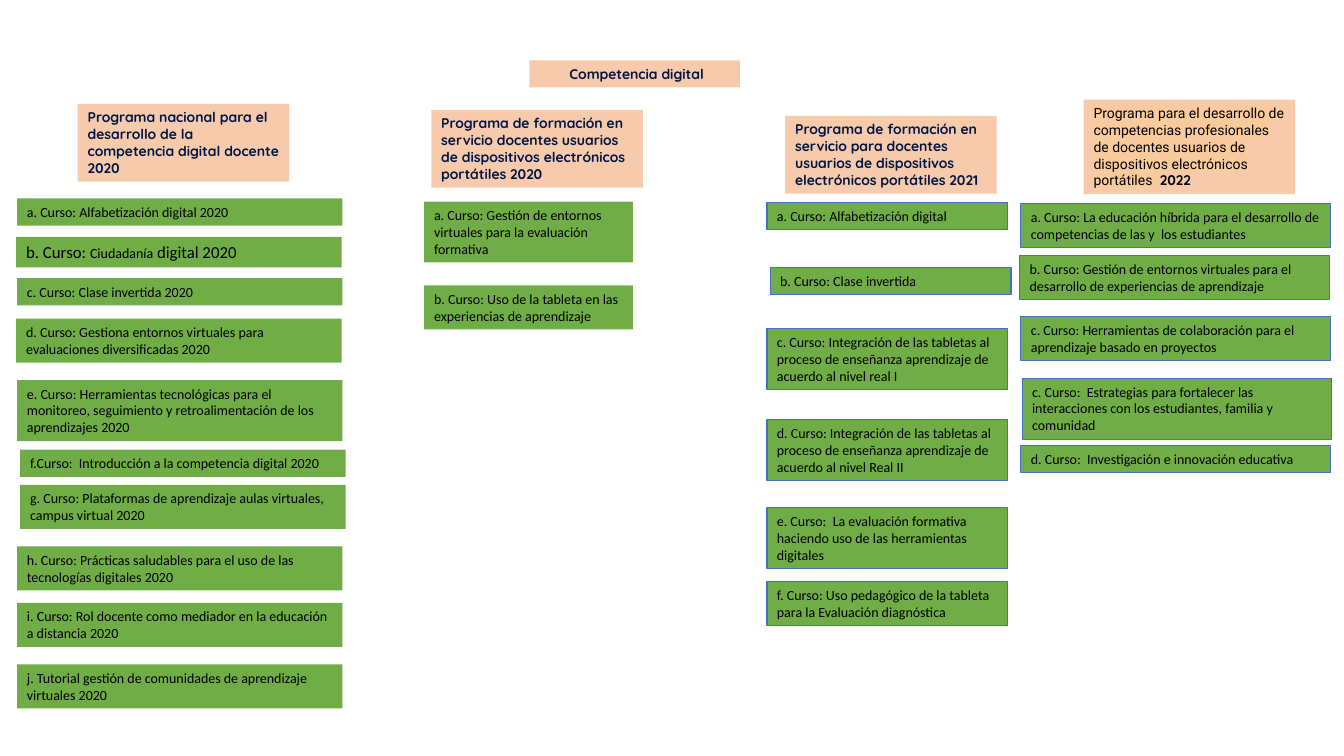
from dataclasses import dataclass

from lxml.etree import SubElement
from pptx import Presentation
from pptx.dml.color import RGBColor as RGB
from pptx.enum.shapes import MSO_SHAPE as SHAPE
from pptx.enum.text import MSO_ANCHOR as ANCHOR, MSO_AUTO_SIZE as AUTO, PP_ALIGN as ALIGN
from pptx.oxml.ns import qn
from pptx.util import Cm, Pt


@dataclass(frozen=True)
class Theme:
    peach: str = "F7CAAC"
    green: str = "70AD47"
    outline: str = "4472C4"
    navy: str = "011643"
    black: str = "000000"
    highlight: str = "F9CB9C"
    heading_font: str = "Quicksand"
    plain_font: str = "Roboto"
    course_font: str = "Calibri"
    size: int = 10
    large: int = 12
    outline_width: float = 0.75


theme = Theme()


def add_box(left, top, width, lines, fill, text, font, color, bold=False, outlined=False):
    """Add a filled box whose height follows its number of text lines."""
    sp = s.shapes.add_shape(SHAPE.RECTANGLE, Cm(left), Cm(top), Cm(width),
                            Cm(0.26 + 0.425 * lines))
    sp.shadow.inherit = False
    sp.fill.solid()
    sp.fill.fore_color.rgb = RGB.from_string(fill)
    if outlined:
        sp.line.color.rgb = RGB.from_string(theme.outline)
        sp.line.width = Pt(theme.outline_width)
    else:
        sp.line.fill.background()
    tf = sp.text_frame
    tf.word_wrap = True
    tf.auto_size = AUTO.SHAPE_TO_FIT_TEXT
    tf.vertical_anchor = ANCHOR.TOP
    p = tf.paragraphs[0]
    p.alignment = ALIGN.LEFT
    p.font.name = font
    p.font.size = Pt(theme.size)
    p.font.bold = bold
    p.font.color.rgb = RGB.from_string(color)
    for part in [text] if isinstance(text, str) else text:
        r = p.add_run()
        r.text = part
        # The shape style colours its text, so each run states its colour
        r.font.color.rgb = RGB.from_string(color)
    return p


prs = Presentation()
prs.slide_width, prs.slide_height = Cm(33.87), Cm(19.05)
s = prs.slides.add_slide(prs.slide_layouts[6])

# Title
p = add_box(13.34, 1.52, 5.31, 1, theme.peach, " Competencia digital",
            theme.heading_font, theme.navy, bold=True)
p.alignment = ALIGN.CENTER

# Programme headings: left, top, text
programmes = [
    (1.96, 2.62, "Programa nacional para el desarrollo de la competencia digital docente 2020"),
    (10.87, 2.77, "Programa de formación en servicio docentes usuarios de dispositivos "
                  "electrónicos portátiles 2020"),
    (19.79, 2.92, "Programa de formación en servicio para docentes usuarios de dispositivos "
                  "electrónicos portátiles 2021"),
]
for left, top, text in programmes:
    add_box(left, top, 5.33, 4, theme.peach, text, theme.heading_font, theme.navy, bold=True)

# 2022 programme heading, highlighted up to the bold year
p = add_box(27.31, 2.51, 5.33, 5, theme.peach,
            ["Programa para el desarrollo de competencias profesionales de docentes usuarios "
             "de dispositivos electrónicos portátiles ", " ", "2022"],
            theme.plain_font, theme.black)
for r in p.runs[1:]:
    r.font.name = theme.heading_font
    r.font.bold = True
for r in p.runs[:2]:
    rPr = r.font._element if hasattr(r.font, "_element") else r._r.get_or_add_rPr()
    mark = SubElement(rPr, qn("a:highlight"))
    SubElement(mark, qn("a:srgbClr"), val=theme.highlight)
    rPr.find(qn("a:solidFill")).addnext(mark)

# Course columns: width, outlined, courses as (left, top, lines, text)
columns = [
    (8.2, False, [
        (0.43, 5.0, 1, "a. Curso: Alfabetización digital 2020"),
        (0.41, 5.97, 1.2, ["b. Curso: ", "Ciudadanía", " digital 2020"]),
        (0.43, 7.01, 1, "c. Curso: Clase invertida 2020"),
        (0.41, 8.03, 2, "d. Curso: Gestiona entornos virtuales para evaluaciones "
                        "diversificadas 2020"),
        (0.43, 9.58, 3, "e. Curso: Herramientas tecnológicas para el monitoreo, seguimiento y "
                        "retroalimentación de los aprendizajes 2020"),
        (0.51, 11.33, 1, "f.Curso:  Introducción a la competencia digital 2020"),
        (0.51, 12.22, 2, "g. Curso: Plataformas de aprendizaje aulas virtuales, "
                         "campus virtual 2020"),
        (0.43, 13.77, 2, "h. Curso: Prácticas saludables para el uso de las "
                         "tecnologías digitales 2020"),
        (0.43, 15.19, 2, "i. Curso: Rol docente como mediador en la educación a distancia 2020"),
        (0.43, 16.74, 2, "j. Tutorial gestión de comunidades de aprendizaje virtuales 2020"),
    ]),
    (5.26, False, [
        (10.69, 5.08, 3, "a. Curso: Gestión de entornos virtuales para la evaluación formativa"),
        (10.69, 7.19, 2, "b. Curso: Uso de la tableta en las experiencias de aprendizaje"),
    ]),
    (6.07, True, [
        (19.33, 5.11, 1, "a. Curso: Alfabetización digital"),
        (19.41, 6.73, 1, "b. Curso: Clase invertida"),
        (19.33, 8.28, 3, "c. Curso: Integración de las tabletas al proceso de enseñanza "
                         "aprendizaje de acuerdo al nivel real I"),
        (19.33, 10.57, 3, "d. Curso: Integración de las tabletas al proceso de enseñanza "
                          "aprendizaje de acuerdo al nivel Real II"),
        (19.33, 12.8, 3, "e. Curso:  La evaluación formativa haciendo uso de las "
                         "herramientas digitales"),
        (19.33, 14.66, 2, "f. Curso: Uso pedagógico de la tableta para la "
                          "Evaluación diagnóstica"),
    ]),
    (7.8, True, [
        (25.73, 5.13, 2, "a. Curso: La educación híbrida para el desarrollo de competencias "
                         "de las y  los estudiantes"),
        (25.7, 6.45, 2, "b. Curso: Gestión de entornos virtuales para el desarrollo de "
                        "experiencias de aprendizaje"),
        (25.73, 7.98, 2, "c. Curso: Herramientas de colaboración para el aprendizaje basado "
                         "en proyectos"),
        (25.76, 9.53, 3, "c. Curso:  Estrategias para fortalecer las interacciones con los "
                         "estudiantes, familia y comunidad"),
        (25.73, 11.23, 1, "d. Curso:  Investigación e innovación educativa"),
    ]),
]
for width, outlined, courses in columns:
    for left, top, lines, text in courses:
        p = add_box(left, top, width, lines, theme.green, text,
                    theme.course_font, theme.black, outlined=outlined)
        # The course in several parts has larger text around its subject
        if len(p.runs) > 1:
            for r in p.runs[::2]:
                r.font.size = Pt(theme.large)

prs.save("out.pptx")
